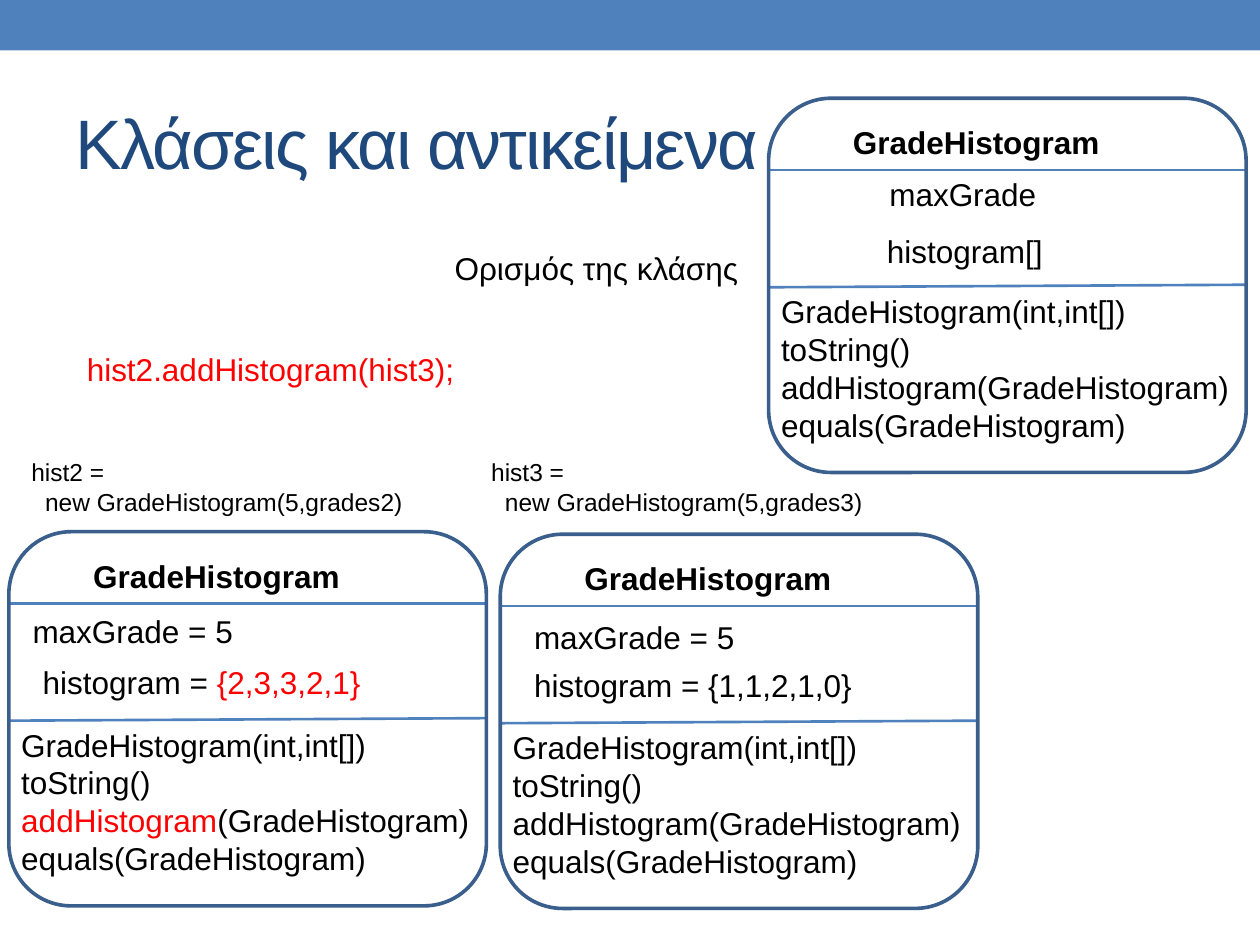
from pptx import Presentation
from pptx.dml.color import RGBColor
from pptx.enum.shapes import MSO_CONNECTOR, MSO_SHAPE
from pptx.enum.text import MSO_ANCHOR
from pptx.oxml.ns import qn
from pptx.util import Inches, Pt
from lxml import etree

RECT = MSO_SHAPE.RECTANGLE
ROUND = MSO_SHAPE.ROUNDED_RECTANGLE
STRAIGHT = MSO_CONNECTOR.STRAIGHT
MIDDLE = MSO_ANCHOR.MIDDLE
COLORS = {"blue": "4F81BD", "edge": "3A5F8C", "navy": "1F497D",
          "black": "000000", "red": "FF0000"}
WIDE, HIGH = 3.79, 2.97


def tint(name):
    return RGBColor.from_string(COLORS[name])


class Deck:
    """Draws styled elements on the current slide."""

    def __init__(self, slide, font="Arial"):
        self.slide = slide
        self.font = font
        self.shapes = slide.shapes

    def text(self, x, y, w, h, lines, size=18, color="black", bold=False):
        box = self.shapes.add_textbox(Inches(x), Inches(y), Inches(w), Inches(h))
        frame = box.text_frame
        frame.word_wrap = False
        for i, line in enumerate(lines):
            para = frame.add_paragraph() if i else frame.paragraphs[0]
            for part in [line] if isinstance(line, str) else line:
                words, hue = (part, color) if isinstance(part, str) else part
                run = para.add_run()
                run.text = words
                run.font.name = self.font
                run.font.size = Pt(size)
                run.font.bold = bold
                run.font.color.rgb = tint(hue)
        return frame

    def title(self, words):
        frame = self.text(0.5, 0.58, 9, 1.08, [words], 40, "navy")
        frame.word_wrap = True
        frame.vertical_anchor = MIDDLE
        frame.paragraphs[0].runs[0].font._element.set("spc", "-100")

    def band(self, x, y, w, h):
        bar = self.shapes.add_shape(RECT, Inches(x), Inches(y), Inches(w), Inches(h))
        bar.shadow.inherit = False
        bar.fill.solid()
        bar.fill.fore_color.rgb = tint("blue")
        bar.line.fill.background()

    def frame(self, x, y):
        box = self.shapes.add_shape(ROUND, Inches(x), Inches(y), Inches(WIDE), Inches(HIGH))
        box.shadow.inherit = False
        box.fill.background()
        box.line.color.rgb = tint("edge")
        box.line.width = Pt(2.08)

    def rule(self, x, y, end):
        line = self.shapes.add_connector(
            STRAIGHT, Inches(x), Inches(y), Inches(x + WIDE), Inches(end))
        line.line.color.rgb = tint("blue")
        line.line.width = Pt(1.5)
        etree.SubElement(line._element.spPr, qn("a:effectLst"))

    def card(self, x, y, fields, add="black"):
        self.shapes = self.slide.shapes.add_group_shape().shapes
        self.text(x + 0.57, y + 0.15, 2.18, 0.4, ["GradeHistogram"], bold=True)
        for left, top, wide, line in fields:
            self.text(left, top, wide, 0.4, [line])
        self.text(x, y + 1.49, WIDE, 1.31, [
            "GradeHistogram(int,int[])", "toString()",
            [("addHistogram", add), "(GradeHistogram)"],
            "equals(GradeHistogram)"])
        self.rule(x, y + 0.57, y + 0.57)
        self.rule(x, y + 1.5, y + 1.48)
        self.frame(x, y)
        self.shapes = self.slide.shapes

    def code(self, x, name, call):
        frame = self.text(x, 3.58, 3.16, 0.57, [name, call], 14)
        indent = frame.paragraphs[1]._p.get_or_add_pPr()
        indent.set("marL", str(Inches(0.11)))


def main():
    prs = Presentation()
    prs.slide_width, prs.slide_height = Inches(10), Inches(7.5)
    deck = Deck(prs.slides.add_slide(prs.slide_layouts[6]))
    deck.band(0, 0, 10, 0.4)
    deck.title("Κλάσεις και αντικείμενα")
    deck.card(6.1, 0.78, [(6.96, 1.34, 1.38, "maxGrade"),
                          (6.94, 1.79, 1.45, "histogram[]")])
    deck.text(3.51, 1.93, 2.47, 0.4, ["Ορισμός της κλάσης"])
    deck.code(0.15, "hist2 =", "new GradeHistogram(5,grades2)")
    deck.code(3.8, "hist3 =", "new GradeHistogram(5,grades3)")
    deck.card(0.07, 4.22, [
        (0.16, 4.81, 1.81, "maxGrade = 5"),
        (0.24, 5.21, 2.75, ["histogram = ", ("{2,3,3,2,1}", "red")])], "red")
    deck.card(3.97, 4.24, [(4.14, 4.86, 1.81, "maxGrade = 5"),
                           (4.14, 5.24, 2.75, "histogram = {1,1,2,1,0}")])
    deck.text(0.59, 2.73, 3.12, 0.4, ["hist2.addHistogram(hist3);"], color="red")
    prs.save("out.pptx")


if __name__ == "__main__":
    main()
